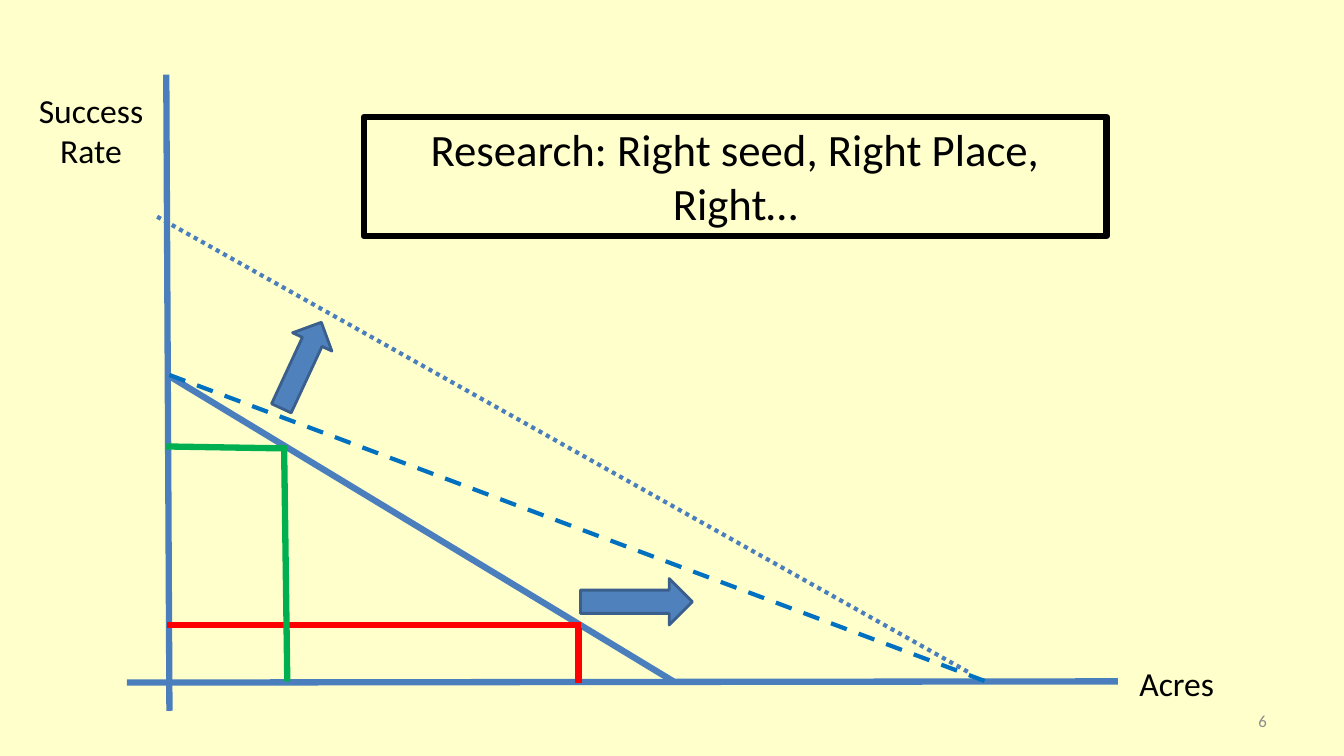
from collections import namedtuple

from lxml import etree
from pptx import Presentation
from pptx import util as u
from pptx.dml.color import RGBColor
from pptx.enum import dml, shapes, text
from pptx.oxml.ns import qn

CREAM = RGBColor(0xFF, 0xFF, 0xCC)
BLACK = RGBColor(0x00, 0x00, 0x00)
GRAY = RGBColor(0x8C, 0x8C, 0x8C)
BLUE = RGBColor(0x4B, 0x7E, 0xBC)
BRIGHT_BLUE = RGBColor(0x00, 0x70, 0xC0)
ARROW_FILL = RGBColor(0x4F, 0x81, 0xBD)
ARROW_EDGE = RGBColor(0x3A, 0x5F, 0x8C)
RED = RGBColor(0xFF, 0x00, 0x00)
GREEN = RGBColor(0x00, 0xB0, 0x50)

DASH = dml.MSO_LINE.DASH
DOTS = dml.MSO_LINE.ROUND_DOT

# All lengths are centimetres.
Box = namedtuple("Box", "left top width height")

# Start, end, colour, weight, dash; points are relative to the plot's box.
PLOT_LINES = [
    ((0.99, 0), (1.07, 16.03), BLUE, 4.5, None),
    ((0, 15.32), (24.97, 15.29), BLUE, 4.5, None),
    ((1.02, 7.57), (13.77, 15.29), BLUE, 4.5, None),
    ((1.02, 13.87), (11.43, 13.87), RED, 4.5, None),
    ((11.38, 13.94), (11.38, 15.32), RED, 4.5, None),
    ((0.99, 9.37), (4.04, 9.42), GREEN, 4.5, None),
    ((3.96, 9.42), (4.04, 15.29), GREEN, 4.5, None),
    ((1.07, 7.57), (21.64, 15.29), BRIGHT_BLUE, 3, DASH),
    ((0.76, 3.58), (21.21, 15.06), BLUE, 3, DOTS),
]

# Box relative to the plot's box, and rotation.
SHIFT_ARROWS = [
    (Box(11.43, 12.7, 2.82, 1.17), 0),
    (Box(3.2, 6.78, 2.39, 1.09), 294.9),
]


def lengths(box):
    return [u.Cm(value) for value in box]


def write(frame, words, size, color, align):
    frame.word_wrap = True
    para = frame.paragraphs[0]
    para.alignment = align
    span = para.add_run()
    span.text = words
    span.font.name = "Calibri"
    span.font.size = u.Pt(size)
    span.font.color.rgb = color


def add_label(page, box, words, size=24, color=BLACK,
              align=text.PP_ALIGN.CENTER, anchor=text.MSO_ANCHOR.TOP):
    frame = page.shapes.add_textbox(*lengths(box)).text_frame
    frame.vertical_anchor = anchor
    write(frame, words, size, color, align)


def add_title(page, box, words):
    title = page.shapes.add_shape(shapes.MSO_SHAPE.RECTANGLE, *lengths(box))
    title.shadow.inherit = False
    title.fill.background()
    title.line.color.rgb = BLACK
    title.line.width = u.Pt(4.5)
    title.text_frame.vertical_anchor = text.MSO_ANCHOR.TOP
    write(title.text_frame, words, 32, BLACK, text.PP_ALIGN.CENTER)


def add_line(page, box, start, end, color, weight, dash):
    ends = [u.Cm(value) for x, y in (start, end)
            for value in (box.left + x, box.top + y)]
    line = page.shapes.add_connector(shapes.MSO_CONNECTOR.STRAIGHT, *ends)
    line.line.color.rgb = color
    line.line.width = u.Pt(weight)
    if dash:
        line.line.dash_style = dash
    etree.SubElement(line._element.spPr, qn("a:effectLst"))


def add_shift_arrow(page, box, place, rotation):
    place = place._replace(left=box.left + place.left, top=box.top + place.top)
    arrow = page.shapes.add_shape(shapes.MSO_SHAPE.RIGHT_ARROW, *lengths(place))
    arrow.shadow.inherit = False
    arrow.rotation = rotation
    arrow.fill.solid()
    arrow.fill.fore_color.rgb = ARROW_FILL
    arrow.line.color.rgb = ARROW_EDGE
    arrow.line.width = u.Pt(2)


def add_plot(page, box):
    """Draw the axes, the success curves, their guides and the shift arrows."""
    for line in PLOT_LINES:
        add_line(page, box, *line)
    for place, rotation in SHIFT_ARROWS:
        add_shift_arrow(page, box, place, rotation)
    add_label(page, Box(box.left - 2.67, box.top + 0.25, 3.53, 2.31),
              "Success Rate")
    add_label(page, Box(box.left + 24.69, box.top + 14.71, 3.53, 1.27), "Acres")


def main():
    deck = Presentation()
    deck.slide_width, deck.slide_height = u.Cm(33.87), u.Cm(19.05)
    page = deck.slides.add_slide(deck.slide_layouts[6])
    page.background.fill.solid()
    page.background.fill.fore_color.rgb = CREAM
    add_plot(page, Box(3.2, 1.88, 24.97, 16.03))
    add_title(page, Box(9.17, 2.95, 18.72, 3),
              "Research: Right seed, Right Place, Right…")
    add_label(page, Box(24.28, 17.65, 7.9, 1.02), "6", 12, GRAY,
              text.PP_ALIGN.RIGHT, text.MSO_ANCHOR.MIDDLE)
    deck.save("out.pptx")


if __name__ == "__main__":
    main()
